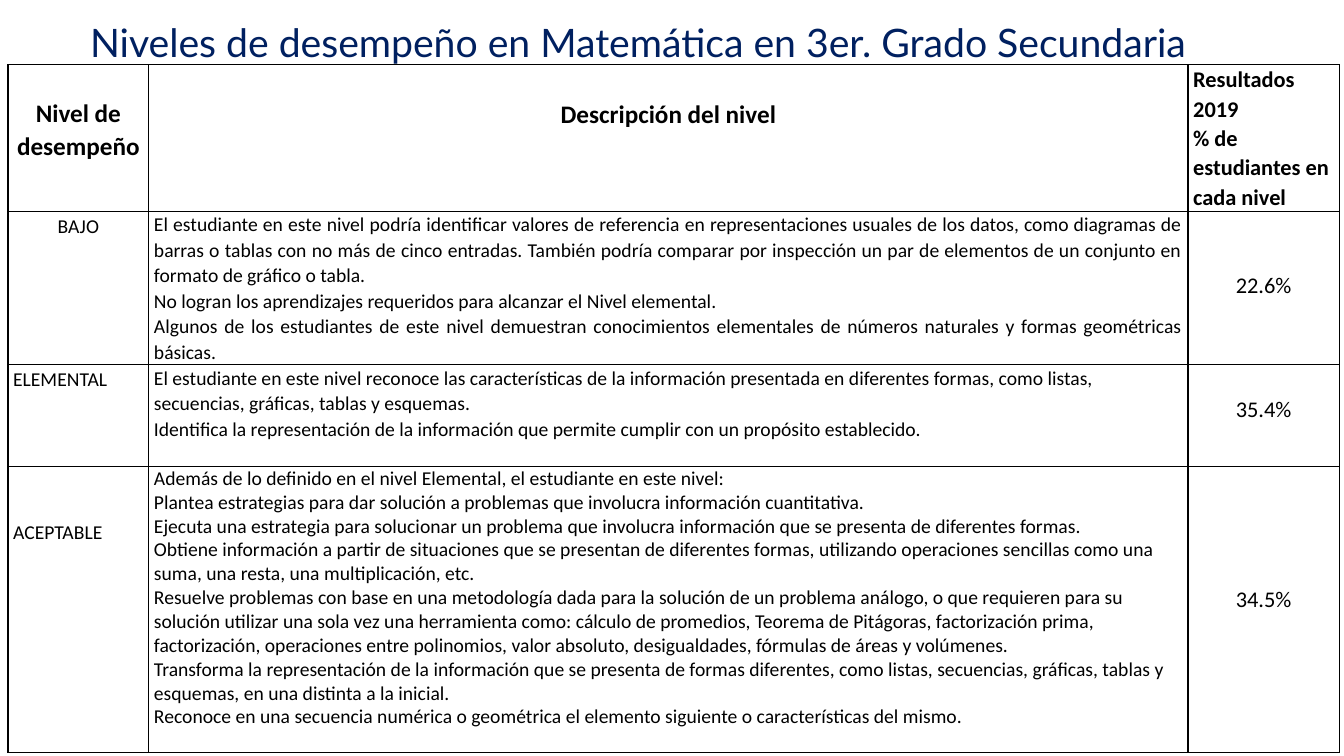
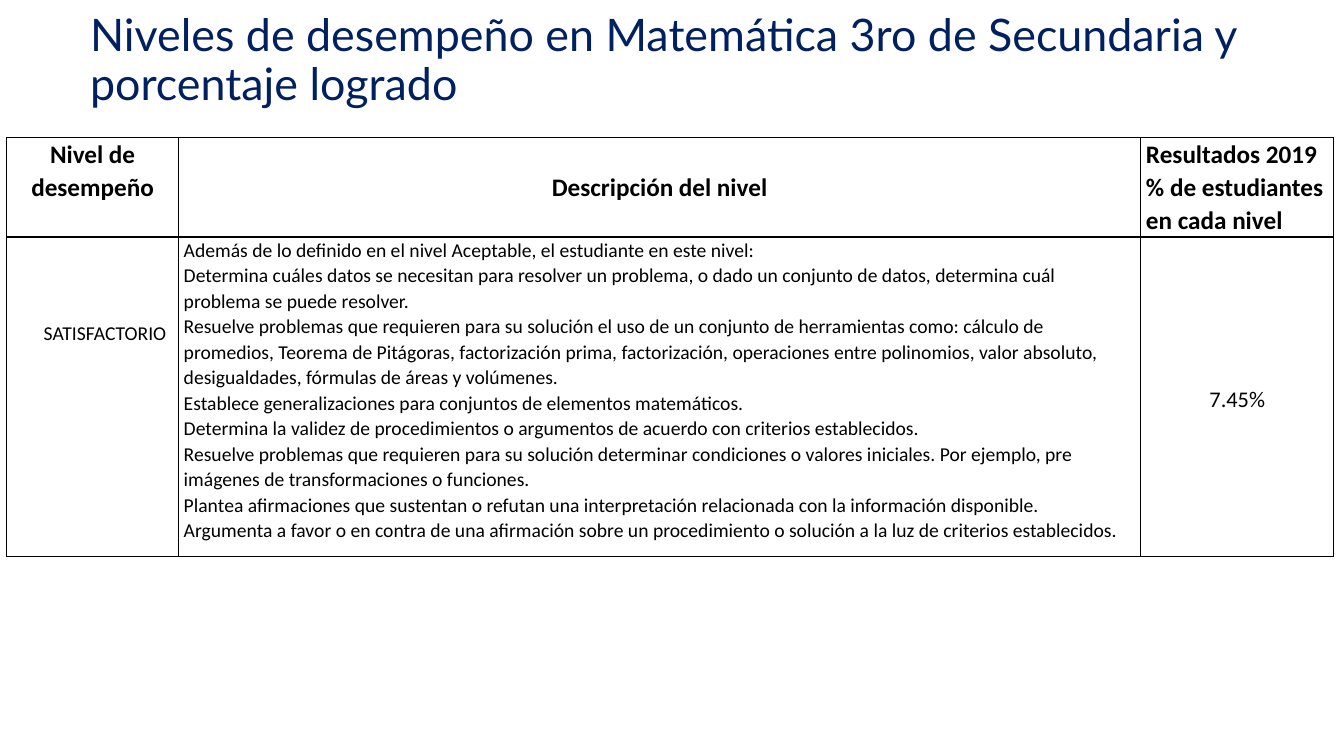
"""Build two slides on levels of achievement in mathematics."""
import pptx
import pptx.util
import pptx.dml.color
import pptx.enum.text
import pptx.oxml
import pptx.oxml.ns

Cm = pptx.util.Cm
Pt = pptx.util.Pt
ALIGN = pptx.enum.text.PP_ALIGN
NAVY = pptx.dml.color.RGBColor(0x00, 0x20, 0x60)
BLACK = pptx.dml.color.RGBColor(0x00, 0x00, 0x00)
HEAD, BODY = "Lato", "Calibri"
LINE = 1.07
STEP = 0.74
INSET = 0.13

LOW = [
    "El estudiante en este nivel podría identificar valores de referencia en representaciones usuales de los datos, como diagramas de barras o tablas con no más de cinco entradas. También podría comparar por inspección un par de elementos de un conjunto en formato de gráfico o tabla.",
    "No logran los aprendizajes requeridos para alcanzar el Nivel elemental.",
    "Algunos de los estudiantes de este nivel demuestran conocimientos elementales de números naturales y formas geométricas básicas.",
]
BASIC = [
    "El estudiante en este nivel reconoce las características de la información presentada en diferentes formas, como listas, secuencias, gráficas, tablas y esquemas.",
    "Identifica la representación de la información que permite cumplir con un propósito establecido.",
]
FAIR = [
    "Además de lo definido en el nivel Elemental, el estudiante en este nivel:",
    "Plantea estrategias para dar solución a problemas que involucra información cuantitativa.",
    "Ejecuta una estrategia para solucionar un problema que involucra información que se presenta de diferentes formas.",
    "Obtiene información a partir de situaciones que se presentan de diferentes formas, utilizando operaciones sencillas como una suma, una resta, una multiplicación, etc.",
    "Resuelve problemas con base en una metodología dada para la solución de un problema análogo, o que requieren para su solución utilizar una sola vez una herramienta como: cálculo de promedios, Teorema de Pitágoras, factorización prima, factorización, operaciones entre polinomios, valor absoluto, desigualdades, fórmulas de áreas y volúmenes.",
    "Transforma la representación de la información que se presenta de formas diferentes, como listas, secuencias, gráficas, tablas y esquemas, en una distinta a la inicial.",
    "Reconoce en una secuencia numérica o geométrica el elemento siguiente o características del mismo.",
]
GOOD = [
    "Además de lo definido en el nivel Aceptable, el estudiante en este nivel:",
    "Determina cuáles datos se necesitan para resolver un problema, o dado un conjunto de datos, determina cuál problema se puede resolver.",
    "Resuelve problemas que requieren para su solución el uso de un conjunto de herramientas como: cálculo de promedios, Teorema de Pitágoras, factorización prima, factorización, operaciones entre polinomios, valor absoluto, desigualdades, fórmulas de áreas y volúmenes.",
    "Establece generalizaciones para conjuntos de elementos matemáticos.",
    "Determina la validez de procedimientos o argumentos de acuerdo con criterios establecidos.",
    "Resuelve problemas que requieren para su solución determinar condiciones o valores iniciales. Por ejemplo, pre imágenes de transformaciones o funciones.",
    "Plantea afirmaciones que sustentan o refutan una interpretación relacionada con la información disponible.",
    "Argumenta a favor o en contra de una afirmación sobre un procedimiento o solución a la luz de criterios establecidos.",
]


def style(para, text, font, size, color, bold=False):
    para.text = text
    para.font.name = font
    para.font.size = Pt(size)
    para.font.color.rgb = color
    para.font.bold = bold


def add_title(slide, text, top, size):
    box = slide.shapes.add_textbox(Cm(2.02), Cm(top), Cm(29.95), Cm(1.68))
    frame = box.text_frame
    frame.word_wrap = True
    frame.vertical_anchor = pptx.enum.text.MSO_ANCHOR.MIDDLE
    para = frame.paragraphs[0]
    style(para, text, HEAD, size, NAVY)
    para.line_spacing = 0.9


def add_edges(cell):
    props = cell._tc.get_or_add_tcPr()
    for side in ("lnL", "lnR", "lnT", "lnB"):
        props.append(pptx.oxml.parse_xml(
            f'<a:{side} {pptx.oxml.ns.nsdecls("a")} w="12700"><a:solidFill>'
            f'<a:srgbClr val="{BLACK}"/></a:solidFill></a:{side}>'))


def fill_cell(cell, lines, size=14, align=ALIGN.LEFT, bold=False,
              pad=0, left=INSET, space=LINE):
    add_edges(cell)
    cell.fill.background()
    cell.margin_left, cell.margin_right = Cm(left), Cm(INSET)
    cell.margin_top, cell.margin_bottom = Cm(pad), 0
    frame = cell.text_frame
    for i, text in enumerate(lines):
        para = frame.add_paragraph() if i else frame.paragraphs[0]
        style(para, text, BODY, size, BLACK, bold)
        para.alignment = align
        para.line_spacing = space


def add_grid(slide, left, top, cols, rows):
    frame = slide.shapes.add_table(len(rows), len(cols), Cm(left), Cm(top),
                                   Cm(sum(cols)), Cm(sum(rows)))
    grid = frame.table
    grid.first_row = grid.horz_banding = False
    for col, width in zip(grid.columns, cols):
        col.width = Cm(width)
    for row, height in zip(grid.rows, rows):
        row.height = Cm(height)
    return grid


def fill_head(grid, pad, size):
    fill_cell(grid.cell(0, 0), ["Nivel de desempeño"], 18, ALIGN.CENTER, True, pad)
    fill_cell(grid.cell(0, 1), ["Descripción del nivel"], 18, ALIGN.CENTER, True, 0.83)
    fill_cell(grid.cell(0, 2), ["Resultados 2019", "% de estudiantes en cada nivel"],
              size, bold=True)


def fill_level(grid, row, name, lines, share, drop, label, body):
    fill_cell(grid.cell(row, 0), [name], **label)
    fill_cell(grid.cell(row, 1), lines, **body)
    fill_cell(grid.cell(row, 2), [share], 16, ALIGN.CENTER, pad=drop * STEP)


def main():
    deck = pptx.Presentation()
    deck.slide_width, deck.slide_height = Cm(33.87), Cm(19.05)
    blank = deck.slide_layouts[6]

    slide = deck.slides.add_slide(blank)
    add_title(slide, "Niveles de desempeño en Matemática en 3er. Grado Secundaria", 0.28, 28)
    grid = add_grid(slide, 0.2, 1.63, (3.55, 26.19, 3.81), (3.7, 3.86, 2.57, 7.2))
    fill_head(grid, 0.8, 16)
    fill_level(grid, 1, "BAJO", LOW, "22.6%", 2,
               {"align": ALIGN.CENTER, "space": 1.15}, {"align": ALIGN.JUSTIFY})
    fill_level(grid, 2, "ELEMENTAL", BASIC, "35.4%", 1, {"space": 1.15}, {})
    fill_level(grid, 3, "ACEPTABLE", FAIR, "34.5%", 4,
               {"space": 1.15, "pad": 1.28}, {"space": 1.0})

    slide = deck.slides.add_slide(blank)
    add_title(slide, "Niveles de desempeño en Matemática 3ro de Secundaria y porcentaje logrado",
              0.71, 32)
    grid = add_grid(slide, 0.17, 3.47, (4.33, 24.25, 4.86), (2.5, 8.06))
    fill_head(grid, 0, 18)
    fill_level(grid, 1, "SATISFACTORIO", GOOD, "7.45%", 5, {"pad": 2.1, "left": 0.93}, {})

    deck.save("out.pptx")


if __name__ == "__main__":
    main()
